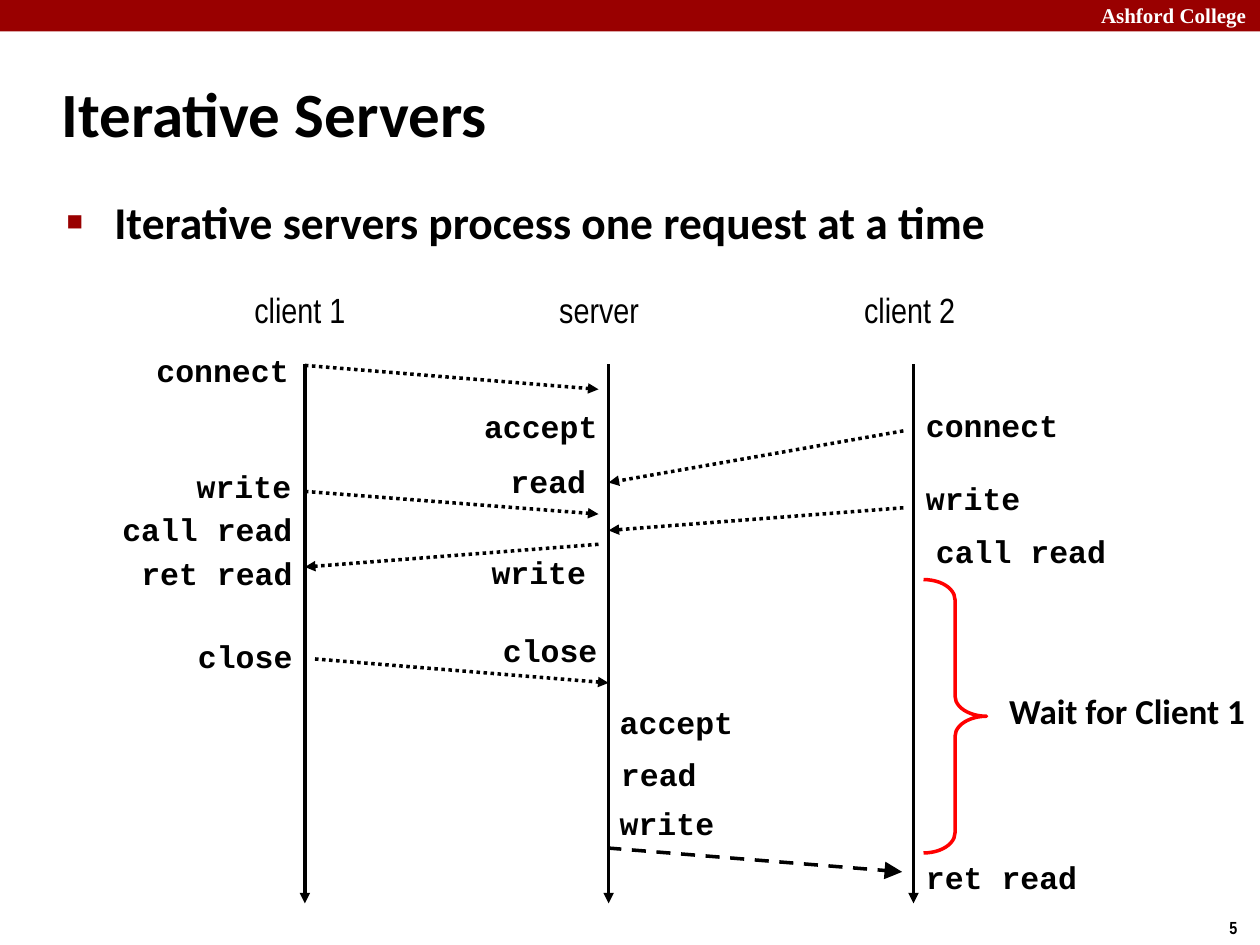
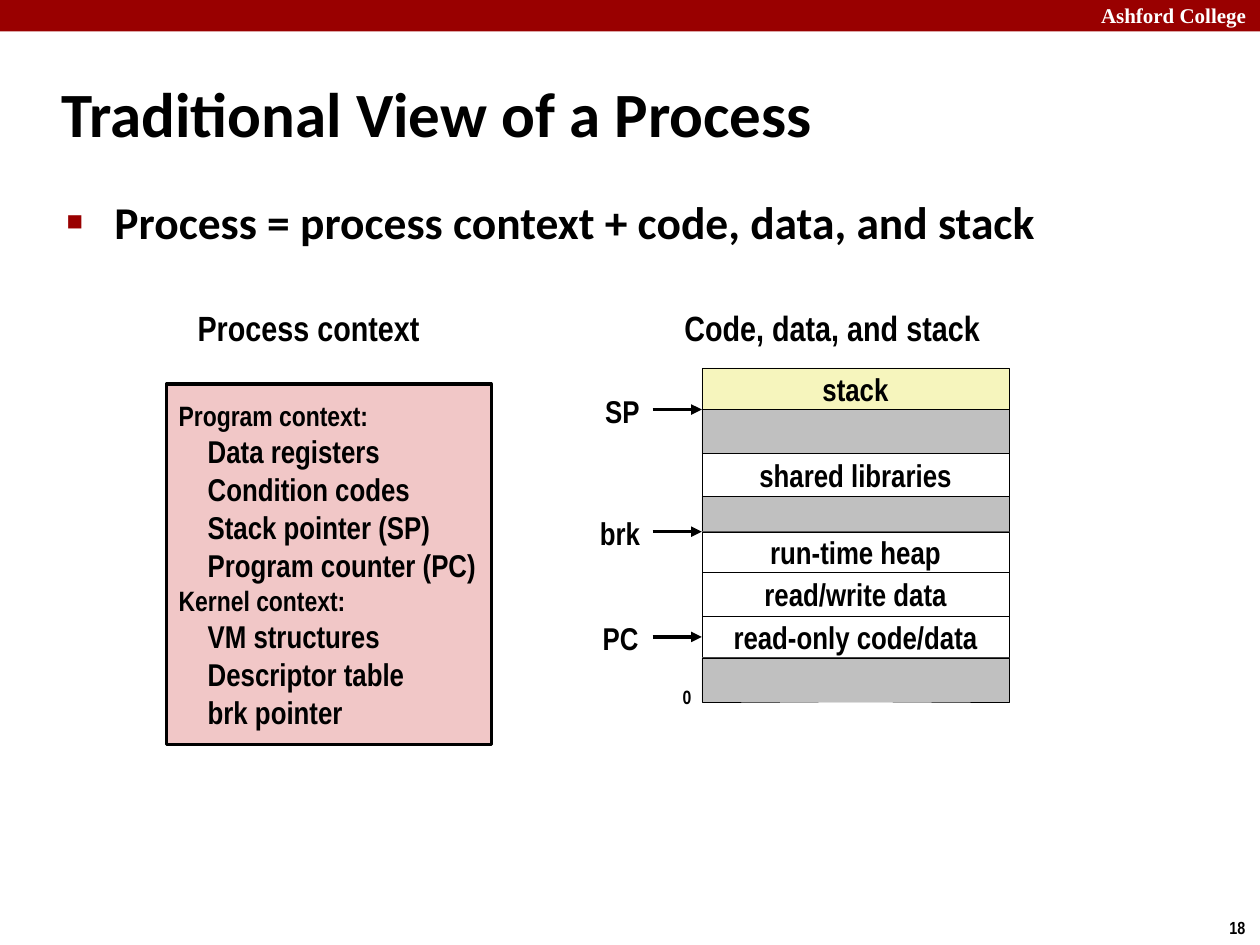
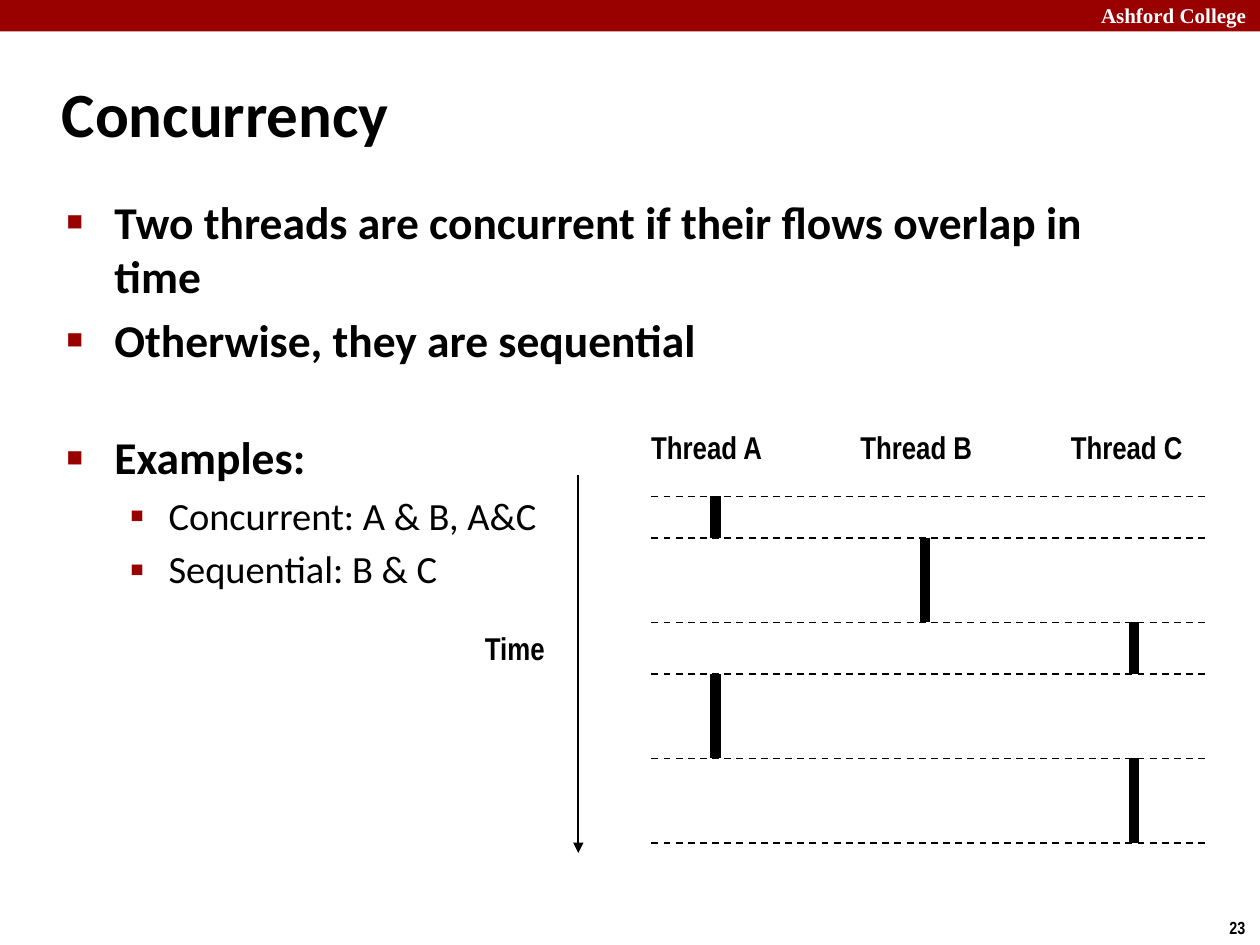
import dataclasses
import itertools

import lxml.etree
import pptx
import pptx.dml.color
import pptx.enum.dml
import pptx.enum.shapes
import pptx.enum.text
import pptx.oxml.ns
import pptx.util

ALIGN = pptx.enum.text.PP_ALIGN
ANCHOR = pptx.enum.text.MSO_ANCHOR
FIT = pptx.enum.text.MSO_AUTO_SIZE
DASH = pptx.enum.dml.MSO_LINE
SHAPE = pptx.enum.shapes.MSO_SHAPE
STRAIGHT = pptx.enum.shapes.MSO_CONNECTOR.STRAIGHT
TITLE_ONLY = 5
COLUMNS, ROWS = 100, 75
LEFT_SIDE = 1


@dataclasses.dataclass(frozen=True)
class Theme:
    black: str = "000000"
    white: str = "FFFFFF"
    red: str = "990000"
    alert: str = "FF0000"
    gray: str = "C0C0C0"
    pink: str = "F1C7C7"
    yellow: str = "F6F5BD"
    body_font: str = "Calibri"
    label_font: str = "Arial Narrow"
    code_font: str = "Courier New"
    brand_font: str = "Times New Roman"
    title_size: int = 36
    bullet_size: int = 26
    detail_size: int = 22
    heading_size: int = 20
    label_size: int = 18
    note_size: int = 16
    brand_size: int = 12
    zero_size: int = 11
    number_size: int = 10


THEME = Theme()


def rgb(value):
    return pptx.dml.color.RGBColor.from_string(value)


def add_xml(parent, tag, **attributes):
    return lxml.etree.SubElement(parent, pptx.oxml.ns.qn(tag), attributes)


def write_para(frame, text, *, font=THEME.label_font, size=THEME.label_size,
               color=THEME.black, bold=True, align=ALIGN.LEFT, margin=0,
               indent=0, before=0):
    first = frame.paragraphs[0]
    para = frame.add_paragraph() if first.runs else first
    para.alignment = align
    para.space_before = pptx.util.Pt(before)
    properties = para._p.get_or_add_pPr()
    properties.set("marL", str(pptx.util.Inches(margin)))
    properties.set("indent", str(pptx.util.Inches(indent)))
    span = para.add_run()
    span.text = text
    span.font.name = font
    span.font.size = pptx.util.Pt(size)
    span.font.bold = bold
    span.font.color.rgb = rgb(color)
    return para


class Page:
    def __init__(self, deck, title, number):
        self.theme = THEME
        self.column = deck.slide_width / COLUMNS
        self.row = deck.slide_height / ROWS
        self.slide = deck.slides.add_slide(deck.slide_layouts[TITLE_ONLY])
        self.shapes = self.slide.shapes
        self.box(0, 0, COLUMNS, 2.5, fill=self.theme.red)
        self.text("Ashford College", 86.4, -0.3, 14.3, 3, wrap=True,
                  font=self.theme.brand_font, size=self.theme.brand_size,
                  color=self.theme.white)
        self.text(str(number), 96.6, 72.3, 3.4, 2.7, size=self.theme.number_size)
        self.title(title)

    def place(self, *lengths):
        units = itertools.cycle((self.column, self.row))
        return [round(length * unit) for length, unit in zip(lengths, units)]

    def title(self, text):
        holder = self.shapes.title
        holder.left, holder.top, holder.width, holder.height = self.place(
            3.9, 4.8, 83, 8.3)
        frame = holder.text_frame
        frame.auto_size = FIT.NONE
        frame.vertical_anchor = ANCHOR.MIDDLE
        write_para(frame, text, font=self.theme.body_font,
                   size=self.theme.title_size, margin=0.13, indent=-0.13)

    def text(self, text, left, top, width, height, *, wrap=False,
             anchor=ANCHOR.TOP, **style):
        frame = self.shapes.add_textbox(
            *self.place(left, top, width, height)).text_frame
        frame.word_wrap = wrap
        frame.auto_size = FIT.SHAPE_TO_FIT_TEXT
        frame.vertical_anchor = anchor
        write_para(frame, text, **style)

    def code(self, text, top, *, left=None, right=None):
        width = 1.5 * len(text) + 2.1
        align = ALIGN.LEFT if right is None else ALIGN.RIGHT
        start = left if right is None else right - width
        self.text(text, start, top, width, 4, font=self.theme.code_font,
                  align=align)

    def bullets(self, items):
        frame = self.shapes.add_textbox(
            *self.place(4.3, 14.9, 86.4, 54.4)).text_frame
        frame.word_wrap = True
        for text, level, before in items:
            detail = level == 1
            para = write_para(
                frame, text, font=self.theme.body_font, bold=not detail,
                size=self.theme.detail_size if detail else self.theme.bullet_size,
                margin=0.81 if detail else 0.38,
                indent=-0.31 if detail else -0.38, before=before)
            para.level = level
            properties = para._p.get_or_add_pPr()
            color = add_xml(properties, "a:buClr")
            add_xml(color, "a:srgbClr", val=self.theme.red)
            add_xml(properties, "a:buSzPct", val="110000" if detail else "60000")
            add_xml(properties, "a:buFont", typeface="Arial")
            add_xml(properties, "a:buChar", char="▪" if detail else "■")

    def box(self, left, top, width, height, *, kind=SHAPE.RECTANGLE,
            fill=None, line=None, weight=1):
        shape = self.shapes.add_shape(
            kind, *self.place(left, top, width, height))
        shape.shadow.inherit = False
        if fill:
            shape.fill.solid()
            shape.fill.fore_color.rgb = rgb(fill)
        else:
            shape.fill.background()
        if line:
            shape.line.color.rgb = rgb(line)
            shape.line.width = pptx.util.Pt(weight)
        else:
            shape.line.fill.background()
        shape.text_frame.word_wrap = False
        shape.text_frame.vertical_anchor = ANCHOR.MIDDLE
        return shape

    def line(self, start, end, *, weight=2, dash=None, head=None):
        connector = self.shapes.add_connector(
            STRAIGHT, *self.place(*start, *end))
        connector.line.color.rgb = rgb(self.theme.black)
        connector.line.width = pptx.util.Pt(weight)
        if dash:
            connector.line.dash_style = dash
        properties = connector._element.spPr
        if head:
            outline = properties.find(pptx.oxml.ns.qn("a:ln"))
            add_xml(outline, "a:tailEnd", type="triangle", w=head, len=head)
        add_xml(properties, "a:effectLst")
        return connector


def build_servers(deck):
    page = Page(deck, "Iterative Servers", 5)
    page.bullets([("Iterative servers process one request at a time", 0, 5)])
    lifelines = (("client 1", 24.2, 19.2, 9.3), ("server", 48.3, 43.4, 8.4),
                 ("client 2", 72.5, 67.6, 9.3))
    for name, x, left, width in lifelines:
        page.text(name, left, 22.4, width, 4.4, bold=False,
                  size=THEME.heading_size)
        page.line((x, 28.9), (x, 71.7), head="med")

    messages = (
        ((24.2, 29), (47.5, 30.9)), ((71.7, 34.2), (48.3, 38.3)),
        ((24.2, 39), (47.5, 40.8)), ((71.7, 40.3), (48.3, 42.1)),
        ((47.5, 43.2), (24.2, 45)), ((25, 52.3), (48.3, 54.2)),
    )
    for start, end in messages:
        page.line(start, end, dash=DASH.ROUND_DOT, head="med")
    page.line((48.2, 67.3), (71.6, 69.2), dash=DASH.DASH, head="lg")

    calls_before_line = (
        ("connect", 27.4, 23.9), ("write", 36.6, 24.1),
        ("call read", 40, 24.2), ("ret read", 43.5, 24.2),
        ("close", 50.1, 24.2), ("accept", 31.8, 48.4),
        ("read", 36.2, 47.5), ("write", 43.4, 47.5), ("close", 49.6, 48.4),
    )
    for name, top, right in calls_before_line:
        page.code(name, top, right=right)
    calls_after_line = (
        ("accept", 55.3, 48.2), ("read", 59.4, 48.3), ("write", 63.3, 48.2),
        ("connect", 31.7, 72.5), ("write", 37.5, 72.5),
        ("call read", 41.7, 73.3), ("ret read", 67.6, 72.5),
    )
    for name, top, left in calls_after_line:
        page.code(name, top, left=left)

    brace = page.box(73.3, 46, 5, 21.7, kind=SHAPE.RIGHT_BRACE,
                     line=THEME.alert, weight=2)
    brace.adjustments[0] = 0.32
    brace.adjustments[1] = 0.5
    page.text("Wait for Client 1", 79.1, 54.2, 20.9, 4.4,
              font=THEME.body_font, size=THEME.heading_size)


def build_process(deck):
    page = Page(deck, "Traditional View of a Process", 18)
    page.bullets([("Process = process context + code, data, and stack", 0, 5)])
    for name, left, width in (("Process context", 14.6, 19.8),
                              ("Code, data, and stack", 53.2, 25.7)):
        page.text(name, left, 23.8, width, 4.4, anchor=ANCHOR.MIDDLE,
                  size=THEME.heading_size, align=ALIGN.CENTER)

    context = page.box(13.2, 30.5, 25.8, 28.6, fill=THEME.pink,
                       line=THEME.black, weight=2)
    groups = {
        "Program context:": ("Data registers", "Condition codes",
                             "Stack pointer (SP)", "Program counter (PC)"),
        "Kernel context:": ("VM structures", "Descriptor table", "brk pointer"),
    }
    for heading, entries in groups.items():
        write_para(context.text_frame, heading, size=THEME.note_size)
        for entry in entries:
            write_para(context.text_frame, entry, margin=0.23)

    memory_left, top = 55.7, 29.2
    regions = (
        ("stack", 3.3, THEME.yellow), ("", 3.5, THEME.gray),
        ("shared libraries", 3.4, THEME.white), ("", 2.8, THEME.gray),
        ("run-time heap", 3.2, THEME.white),
        ("read/write data", 3.5, THEME.white),
        ("read-only code/data", 3.3, THEME.white), ("", 3.5, THEME.gray),
    )
    tops, boxes = {}, {}
    for name, height, fill in regions:
        region = page.box(memory_left, top, 24.4, height, fill=fill,
                          line=THEME.black, weight=0.25)
        if name:
            write_para(region.text_frame, name, align=ALIGN.CENTER)
            tops[name], boxes[name] = top, region
        top += height

    code_middle = tops["read-only code/data"] + 3.3 / 2
    pointers = (("SP", tops["stack"] + 3.3, 47, 4.8),
                ("brk", tops["run-time heap"], 46.6, 5.2),
                ("PC", code_middle, 46.8, 4.9))
    arrows = {}
    for name, y, left, width in pointers:
        page.text(name, left, y - 1.9, width, 4, anchor=ANCHOR.MIDDLE,
                  align=ALIGN.CENTER)
        arrows[name] = page.line((51.8, y), (memory_left, y), head="med")
    arrows["PC"].end_connect(boxes["read-only code/data"], LEFT_SIDE)
    page.text("0", 53.2, 53.9, 2.7, 2.9, size=THEME.zero_size)


def build_concurrency(deck):
    page = Page(deck, "Concurrency", 23)
    page.bullets([
        ("Two threads are concurrent if their flows overlap in time", 0, 5),
        ("Otherwise, they are sequential", 0, 5),
        ("Examples:", 0, 36),
        ("Concurrent: A & B, A&C", 1, 4.4),
        ("Sequential: B & C", 1, 4.4),
    ])
    page.line((45.9, 37.7), (45.9, 67.7), weight=1, head="med")
    page.text("Time", 37.5, 49.4, 6.8, 4)

    threads = {"A": (50.7, 56.8), "B": (67.3, 73.4), "C": (84, 90)}
    for name, (left, _) in threads.items():
        page.text(f"Thread {name}", left, 33.5, 11, 4)

    switches = (39.4, 42.7, 49.4, 53.5, 60.2, 66.9)
    for name, (start, end) in zip("ABCAC", itertools.pairwise(switches)):
        x = threads[name][1]
        page.line((x, start), (x, end), weight=6)
    for y in switches:
        page.line((51.7, y), (95.9, y), weight=1, dash=DASH.DASH)


def main():
    deck = pptx.Presentation()
    deck.slide_width = pptx.util.Inches(10)
    deck.slide_height = pptx.util.Inches(7.5)
    build_servers(deck)
    build_process(deck)
    build_concurrency(deck)
    deck.save("out.pptx")


if __name__ == "__main__":
    main()
